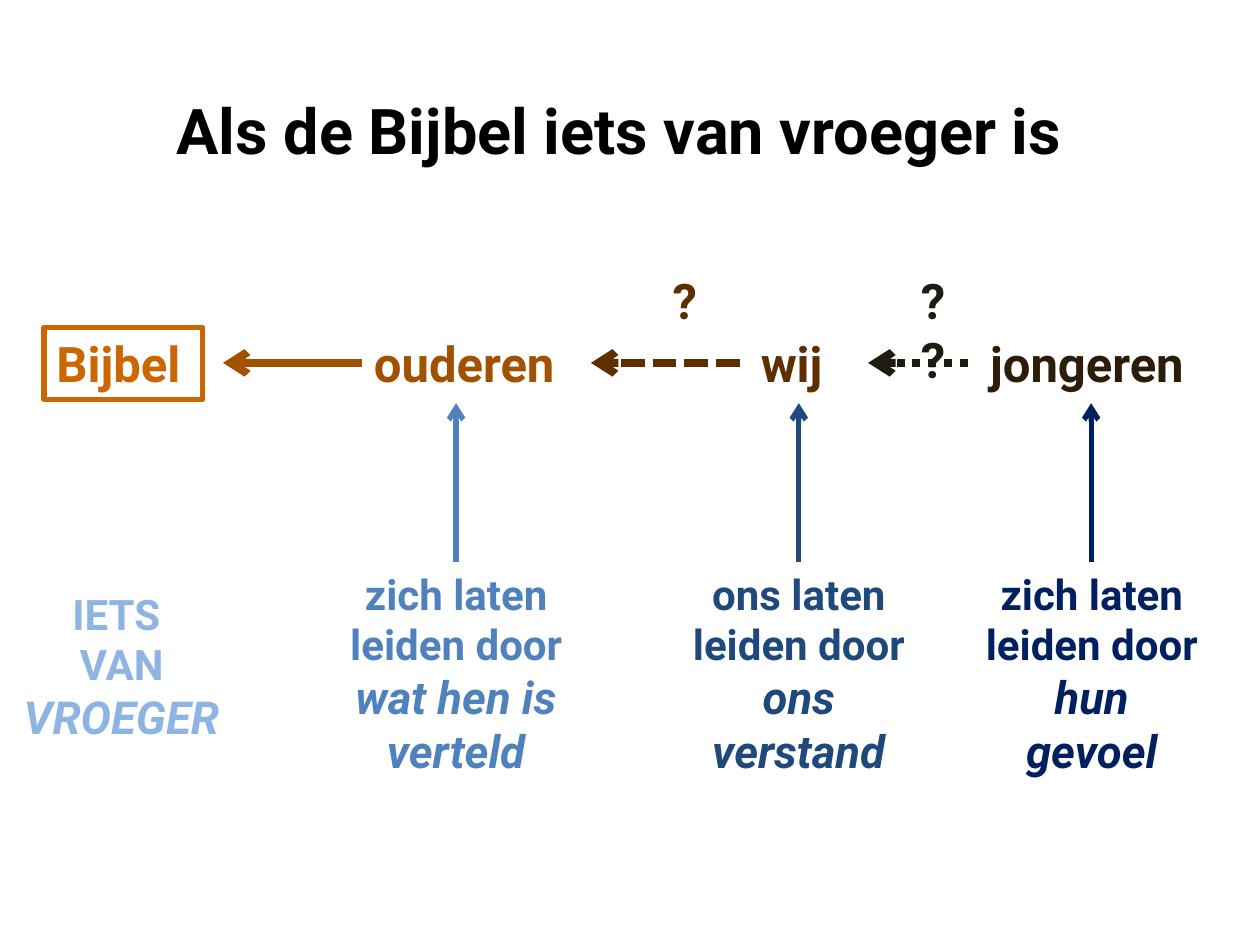
from dataclasses import dataclass

from lxml import etree
from pptx import Presentation
from pptx import util as u
from pptx.dml.color import RGBColor
from pptx.enum import dml, shapes, text
from pptx.oxml import ns


@dataclass(frozen=True)
class Theme:
    font: str = "Roboto"
    title_size: int = 36
    label_size: int = 28
    body_size: int = 24
    stress_size: int = 26
    black: str = "000000"
    bible: str = "CC6600"
    elders: str = "A25100"
    us: str = "5C2E00"
    youth: str = "2D1C09"
    doubt: str = "1E1C11"
    past: str = "8EB4E3"
    elders_guide: str = "4F81BD"
    us_guide: str = "1F497D"
    youth_guide: str = "002060"


THEME = Theme()
CENTER = text.PP_ALIGN.CENTER
LEFT = text.PP_ALIGN.LEFT


def apply_format(target, values):
    for name, value in values.items():
        setattr(target, name, value)


def place(box, left, top, width, height):
    values = dict(left=left, top=top, width=width, height=height)
    apply_format(box, {name: u.Inches(value) for name, value in values.items()})


def write(box, paragraphs, color, size, align=LEFT):
    """Fill a box; each paragraph is a list of (words, stressed) pairs."""
    frame = box.text_frame
    apply_format(frame, dict(
        word_wrap=True,
        vertical_anchor=text.MSO_ANCHOR.TOP,
        auto_size=text.MSO_AUTO_SIZE.SHAPE_TO_FIT_TEXT,
    ))
    for index, spans in enumerate(paragraphs):
        para = frame.add_paragraph() if index else frame.paragraphs[0]
        para.alignment = align
        for words, stressed in spans:
            span = para.add_run()
            span.text = words
            apply_format(span.font, dict(
                name=THEME.font,
                size=u.Pt(THEME.stress_size if stressed else size),
                bold=True,
                italic=stressed,
            ))
            span.font.color.rgb = RGBColor.from_string(color)


def add_title(page, words):
    title = page.shapes.title
    place(title, 1.3, 0.68, 7.56, 0.71)
    write(title, [[(words, False)]], THEME.black, THEME.title_size)


def add_text(page, area, paragraphs, color, size, align=LEFT):
    box = page.shapes.add_textbox(*map(u.Inches, area))
    write(box, paragraphs, color, size, align)


def add_label(page, left, top, width, words, color, align=LEFT):
    add_text(page, (left, top, width, 0.57), [[(words, False)]],
             color, THEME.label_size, align)


def add_frame(page, area, words, color):
    box = page.shapes.add_shape(shapes.MSO_SHAPE.RECTANGLE, *map(u.Inches, area))
    box.shadow.inherit = False
    box.fill.background()
    box.line.color.rgb = RGBColor.from_string(color)
    box.line.width = u.Pt(3)
    write(box, [[(words, False)]], color, THEME.label_size)


def add_arrow(page, start, end, color, width, dash=None):
    arrow = page.shapes.add_connector(
        shapes.MSO_CONNECTOR.STRAIGHT, *map(u.Inches, (*start, *end)))
    arrow.line.color.rgb = RGBColor.from_string(color)
    apply_format(arrow.line, dict(width=u.Pt(width), dash_style=dash))
    # Arrowhead and empty effect list
    outline = arrow.line._get_or_add_ln()
    etree.SubElement(outline, ns.qn("a:tailEnd"), type="arrow")
    etree.SubElement(outline.getparent(), ns.qn("a:effectLst"))


def main():
    deck = Presentation()
    deck.slide_width, deck.slide_height = u.Inches(10), u.Inches(7.5)
    page = deck.slides.add_slide(deck.slide_layouts[5])
    add_title(page, "Als de Bijbel iets van vroeger is")

    # Chain from the young back to the Bible
    chain_top, chain_middle = 2.6, 2.88
    add_frame(page, (0.35, chain_top, 1.26, 0.57), "Bijbel", THEME.bible)
    for left, width, words, color in (
        (2.87, 1.73, "ouderen", THEME.elders),
        (5.94, 0.94, "wij", THEME.us),
        (7.76, 1.89, "jongeren", THEME.youth),
    ):
        add_label(page, left, chain_top, width, words, color)
    for start, end, color, dash in (
        (2.87, 1.77, THEME.elders, None),
        (5.87, 4.69, THEME.us, dml.MSO_LINE.SQUARE_DOT),
        (7.68, 6.89, THEME.doubt, dml.MSO_LINE.ROUND_DOT),
    ):
        add_arrow(page, (start, chain_middle), (end, chain_middle), color, 4.5, dash)

    # Doubts above the weaker links
    for left, marks, color in ((5.16, "?", THEME.us), (7.13, "??", THEME.doubt)):
        add_label(page, left, 2.1, 0.55, marks, color, CENTER)

    # What guides each generation, with an arrow up from the middle of its text
    guide_top = 4.46
    for left, width, lead, stressed, color in (
        (2.48, 2.28, "zich laten leiden door ", ["wat hen is verteld"],
         THEME.elders_guide),
        (5.24, 2.2, "ons laten leiden door ", ["ons", "verstand"], THEME.us_guide),
        (7.6, 2.13, "zich laten leiden door ", ["hun", "gevoel"],
         THEME.youth_guide),
    ):
        first, *rest = stressed
        paragraphs = [[(lead, False), (first, True)]]
        paragraphs += [[(words, True)] for words in rest]
        add_text(page, (left, guide_top, width, 1.78), paragraphs,
                 color, THEME.body_size, CENTER)
        middle = round(left + width / 2, 2)
        add_arrow(page, (middle, guide_top), (middle, 3.2), color, 3)

    # Verdict under the Bible
    add_text(page, (0, 4.62, 1.93, 1.35),
             [[("IETS ", False)], [("VAN ", False), ("VROEGER", True)]],
             THEME.past, THEME.body_size, CENTER)

    deck.save("out.pptx")


if __name__ == "__main__":
    main()
